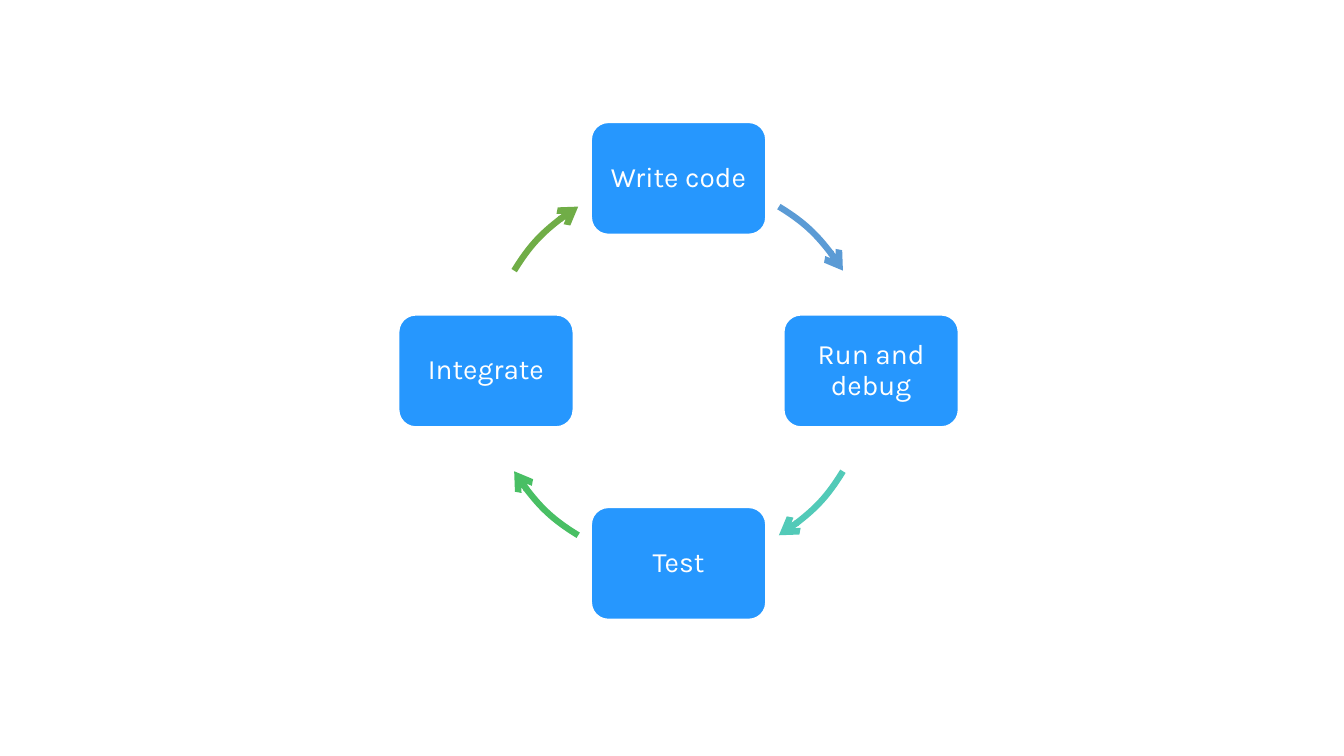
import math

from lxml import etree
from pptx import Presentation
from pptx.dml.color import RGBColor
from pptx.enum.shapes import MSO_SHAPE
from pptx.enum.text import MSO_ANCHOR, PP_ALIGN
from pptx.oxml.ns import qn
from pptx.util import Inches, Pt

ROUNDED = MSO_SHAPE.ROUNDED_RECTANGLE
ARC = MSO_SHAPE.ARC
MIDDLE = MSO_ANCHOR.MIDDLE
CENTER = PP_ALIGN.CENTER

WHITE = RGBColor(0xFF, 0xFF, 0xFF)
STEP_BLUE = RGBColor(0x26, 0x97, 0xFE)
ARROW_BLUE = RGBColor(0x5B, 0x9B, 0xD5)
ARROW_TEAL = RGBColor(0x52, 0xCA, 0xB8)
ARROW_GREEN = RGBColor(0x49, 0xBF, 0x64)
ARROW_OLIVE = RGBColor(0x70, 0xAD, 0x47)

FONT = "Karla"
LINE_WIDTH = Pt(4.5)
STEP_WIDTH, STEP_HEIGHT = 1.78, 1.16
ARROW_SWEEP = 27.2
ADJUSTMENT_PER_DEGREE = 0.6
STEPS = [
    ("Write code", ARROW_BLUE),
    ("Run and debug", ARROW_TEAL),
    ("Test", ARROW_GREEN),
    ("Integrate", ARROW_OLIVE),
]


def add_step(slide, label, left, top, width, height):
    """Add one labelled rounded box of the cycle."""
    shape = slide.shapes.add_shape(
        ROUNDED, Inches(left), Inches(top), Inches(width), Inches(height))
    shape.shadow.inherit = False
    shape.fill.solid()
    shape.fill.fore_color.rgb = STEP_BLUE
    shape.line.color.rgb = WHITE
    shape.line.width = LINE_WIDTH
    frame = shape.text_frame
    frame.word_wrap = True
    frame.vertical_anchor = MIDDLE
    frame.margin_left = frame.margin_right = Inches(0.14)
    frame.margin_top = frame.margin_bottom = Inches(0.14)
    paragraph = frame.paragraphs[0]
    paragraph.alignment = CENTER
    paragraph.line_spacing = 0.9
    run = paragraph.add_run()
    run.text = label
    run.font.name = FONT
    run.font.size = Pt(20)
    run.font.color.rgb = WHITE


def add_arc_arrow(slide, color, middle_angle, left, top, diameter):
    """Add a clockwise arc with an arrowhead, centred on the given angle."""
    shape = slide.shapes.add_shape(
        ARC, Inches(left), Inches(top), Inches(diameter), Inches(diameter))
    shape.shadow.inherit = False
    shape.fill.background()
    for index, offset in enumerate((-ARROW_SWEEP / 2, ARROW_SWEEP / 2)):
        angle = (middle_angle + offset) % 360
        shape.adjustments[index] = angle * ADJUSTMENT_PER_DEGREE
    shape.line.color.rgb = color
    shape.line.width = LINE_WIDTH
    line = shape._element.spPr.find(qn("a:ln"))
    etree.SubElement(line, qn("a:tailEnd"), type="arrow")


def add_cycle(slide, left, top, diameter):
    """Place the steps evenly round a circle with an arrow after each."""
    radius = diameter / 2
    turn = 360 / len(STEPS)
    for index, (label, arrow_color) in enumerate(STEPS):
        angle = index * turn - 90
        center_x = left + radius * (1 + math.cos(math.radians(angle)))
        center_y = top + radius * (1 + math.sin(math.radians(angle)))
        add_step(slide, label, center_x - STEP_WIDTH / 2,
                 center_y - STEP_HEIGHT / 2, STEP_WIDTH, STEP_HEIGHT)
        add_arc_arrow(slide, arrow_color, angle + turn / 2, left, top, diameter)


def main():
    """Build the development cycle slide."""
    presentation = Presentation()
    presentation.slide_width = Inches(13.33)
    presentation.slide_height = Inches(7.5)
    slide = presentation.slides.add_slide(presentation.slide_layouts[6])
    add_cycle(slide, 4.82, 1.77, 3.82)
    presentation.save("out.pptx")


if __name__ == "__main__":
    main()
